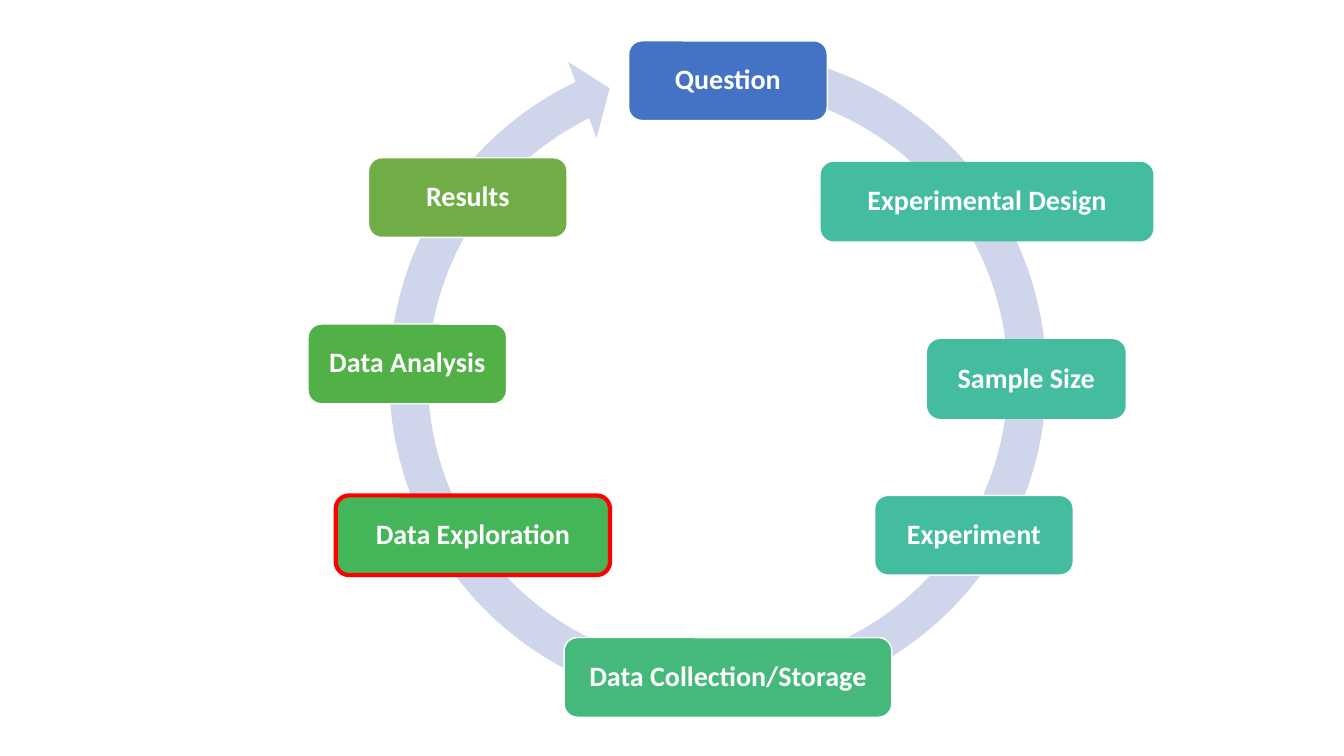
from pptx import Presentation
from pptx.dml.color import RGBColor
from pptx.enum.shapes import MSO_SHAPE
from pptx.enum.text import MSO_ANCHOR, PP_ALIGN
from pptx.util import Inches, Pt

CIRCULAR_ARROW = MSO_SHAPE.CIRCULAR_ARROW
ROUNDED_RECTANGLE = MSO_SHAPE.ROUNDED_RECTANGLE
MIDDLE = MSO_ANCHOR.MIDDLE
CENTER = PP_ALIGN.CENTER

BLANK_LAYOUT = 6
WHITE, RED, TEAL, PALE_BLUE = "FFFFFF", "FF0000", "43BCA0", "CFD5EA"
STEP_WIDTH, STEP_HEIGHT = 1.97, 0.79
STEP_MARGIN = 0.12
THIN, THICK = 1, 3

RING_BOX = (3.65, 0.28, 6.94, 6.94)
# Band width, head angle, end angle, start angle, head width
RING_ADJUSTMENTS = (0.055, 3.307, 146.413, 168.787, 0.058)

# Label, centre measured from the ring's centre, width, fill, outline, outline width
STEPS = [
    ("Question", 0.1, -2.95, STEP_WIDTH, "4472C4", WHITE, THIN),
    ("Experimental Design", 2.67, -1.75, 3.3, TEAL, None, None),
    ("Sample Size", 3.06, 0.01, STEP_WIDTH, TEAL, None, None),
    ("Experiment", 2.54, 1.56, STEP_WIDTH, TEAL, WHITE, THIN),
    ("Data Collection/Storage", 0.1, 2.97, 3.25, "44B97B", WHITE, THIN),
    ("Data Exploration", -2.43, 1.56, 2.72, "45B559", RED, THICK),
    ("Data Analysis", -3.08, -0.14, STEP_WIDTH, "52B146", WHITE, THIN),
    ("Results", -2.48, -1.79, STEP_WIDTH, "70AD47", WHITE, THIN),
]


def color(hex_string):
    return RGBColor.from_string(hex_string)


def add_filled_shape(slide, kind, box, fill, outline=None, outline_width=None):
    shape = slide.shapes.add_shape(kind, *(Inches(length) for length in box))
    shape.shadow.inherit = False
    shape.fill.solid()
    shape.fill.fore_color.rgb = color(fill)
    if outline:
        shape.line.color.rgb = color(outline)
        shape.line.width = Pt(outline_width)
    else:
        shape.line.fill.background()
    return shape


def write_label(shape, label):
    frame = shape.text_frame
    frame.word_wrap = True
    frame.vertical_anchor = MIDDLE
    frame.margin_left = frame.margin_right = Inches(STEP_MARGIN)
    frame.margin_top = frame.margin_bottom = Inches(STEP_MARGIN)
    paragraph = frame.paragraphs[0]
    paragraph.text = label
    paragraph.alignment = CENTER
    paragraph.line_spacing = 0.9
    paragraph.font.name = "Calibri"
    paragraph.font.size = Pt(20)
    paragraph.font.bold = True
    paragraph.font.color.rgb = color(WHITE)


def add_cycle(slide, box):
    """Draw the ring arrow in the box and set the steps around its centre."""
    ring = add_filled_shape(slide, CIRCULAR_ARROW, box, PALE_BLUE)
    for index, value in enumerate(RING_ADJUSTMENTS):
        ring.adjustments[index] = value

    left, top, width, height = box
    center_x, center_y = left + width / 2, top + height / 2
    for label, offset_x, offset_y, step_width, fill, outline, outline_width in STEPS:
        step_box = (
            center_x + offset_x - step_width / 2,
            center_y + offset_y - STEP_HEIGHT / 2,
            step_width,
            STEP_HEIGHT,
        )
        step = add_filled_shape(
            slide, ROUNDED_RECTANGLE, step_box, fill, outline, outline_width
        )
        write_label(step, label)


def main():
    presentation = Presentation()
    presentation.slide_width = Inches(13.33)
    presentation.slide_height = Inches(7.5)
    slide = presentation.slides.add_slide(presentation.slide_layouts[BLANK_LAYOUT])
    add_cycle(slide, RING_BOX)
    presentation.save("out.pptx")


if __name__ == "__main__":
    main()
